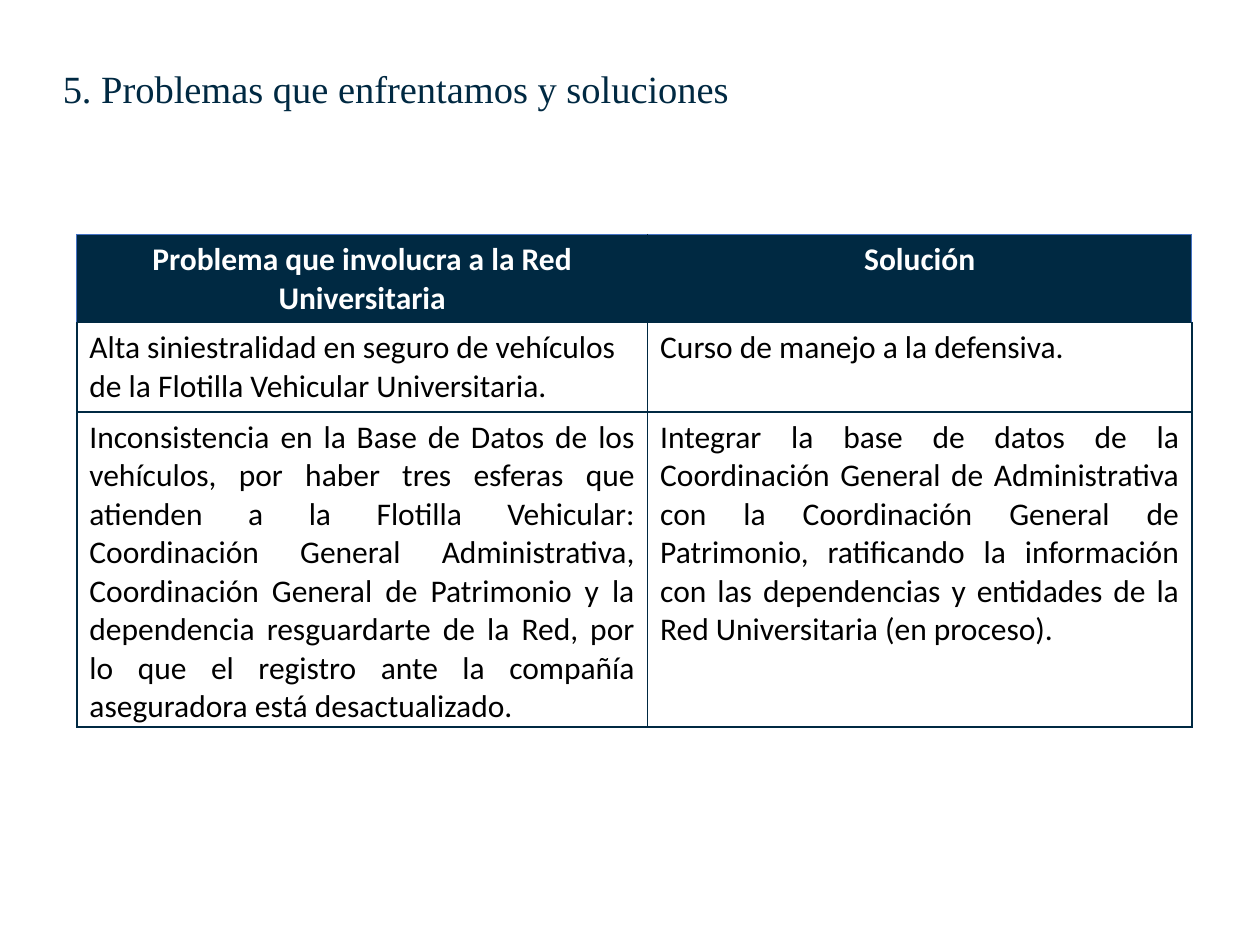
from dataclasses import dataclass

from lxml import etree
from pptx import Presentation
from pptx.dml.color import RGBColor
from pptx.enum.text import MSO_ANCHOR, PP_ALIGN
from pptx.oxml.ns import qn
from pptx.util import Inches, Pt

LEFT, CENTER, JUSTIFY = PP_ALIGN.LEFT, PP_ALIGN.CENTER, PP_ALIGN.JUSTIFY
MIDDLE = MSO_ANCHOR.MIDDLE
NAVY, BLUE, WHITE, BLACK = "002942", "4472C4", "FFFFFF", "000000"
COLUMN_WIDTHS = (4.53, 4.32)
ROW_HEIGHTS = (0.7, 0.71, 2.49)
SIDES = ("L", "R", "T", "B")


@dataclass(frozen=True)
class RowStyle:
    alignment: PP_ALIGN
    color: str = BLACK
    bold: bool = False
    fill: str = WHITE


@dataclass(frozen=True)
class TableRow:
    problem: str
    solution: str
    style: RowStyle


ROWS = (
    TableRow(
        "Problema que involucra a la Red Universitaria",
        "Solución",
        RowStyle(CENTER, WHITE, True, NAVY),
    ),
    TableRow(
        "Alta siniestralidad en seguro de vehículos de la Flotilla Vehicular "
        "Universitaria.",
        "Curso de manejo a la defensiva.",
        RowStyle(LEFT),
    ),
    TableRow(
        "Inconsistencia en la Base de Datos de los vehículos, por haber tres "
        "esferas que atienden a la Flotilla Vehicular: Coordinación General "
        "Administrativa, Coordinación General de Patrimonio y la dependencia "
        "resguardarte de la Red, por lo que el registro ante la compañía "
        "aseguradora está desactualizado.",
        "Integrar la base de datos de la Coordinación General de Administrativa "
        "con la Coordinación General de Patrimonio, ratificando la información "
        "con las dependencias y entidades de la Red Universitaria (en proceso).",
        RowStyle(JUSTIFY),
    ),
)


def rgb(value: str) -> RGBColor:
    return RGBColor.from_string(value)


def write_text(frame, text: str, alignment: PP_ALIGN, color: str, **font_format) -> None:
    paragraph = frame.paragraphs[0]
    paragraph.alignment = alignment
    run = paragraph.add_run()
    run.text = text
    for name, value in font_format.items():
        setattr(run.font, name, value)
    run.font.color.rgb = rgb(color)


def add_border(cell, side: str, color: str, width: float) -> None:
    properties = cell._tc.get_or_add_tcPr()
    line = etree.SubElement(properties, qn(f"a:ln{side}"), w=str(Pt(width)))
    fill = etree.SubElement(line, qn("a:solidFill"))
    etree.SubElement(fill, qn("a:srgbClr"), val=color)


def add_title(slide, text: str) -> None:
    box = slide.shapes.add_textbox(Inches(0.4), Inches(0.35), Inches(8.94), Inches(0.74))
    frame = box.text_frame
    frame.word_wrap = True
    frame.vertical_anchor = MIDDLE
    write_text(frame, text, LEFT, NAVY, name="Times New Roman", size=Pt(22))
    frame.paragraphs[0].line_spacing = 0.9


def fill_cell(cell, text: str, style: RowStyle, outer_sides: str) -> None:
    for side in SIDES:
        if side in outer_sides:
            add_border(cell, side, BLUE, 0.5)
        else:
            add_border(cell, side, NAVY, 1)
    cell.fill.solid()
    cell.fill.fore_color.rgb = rgb(style.fill)
    write_text(
        cell.text_frame, text, style.alignment, style.color,
        name="Calibri", size=Pt(18), bold=style.bold,
    )


def add_problem_table(slide, rows: tuple[TableRow, ...]) -> None:
    table = slide.shapes.add_table(
        len(rows), len(COLUMN_WIDTHS), Inches(0.61), Inches(1.86),
        Inches(sum(COLUMN_WIDTHS)), Inches(sum(ROW_HEIGHTS)),
    ).table
    for column, width in zip(table.columns, COLUMN_WIDTHS):
        column.width = Inches(width)
    for index, (row, height) in enumerate(zip(rows, ROW_HEIGHTS)):
        table.rows[index].height = Inches(height)
        header_sides = ("LT", "RT") if index == 0 else ("", "")
        texts = (row.problem, row.solution)
        for cell, text, sides in zip(table.rows[index].cells, texts, header_sides):
            fill_cell(cell, text, row.style, sides)


def main() -> None:
    presentation = Presentation()
    presentation.slide_width = Inches(10)
    presentation.slide_height = Inches(7.5)
    slide = presentation.slides.add_slide(presentation.slide_layouts[6])
    add_title(slide, "5. Problemas que enfrentamos y soluciones")
    add_problem_table(slide, ROWS)
    presentation.save("out.pptx")


if __name__ == "__main__":
    main()
